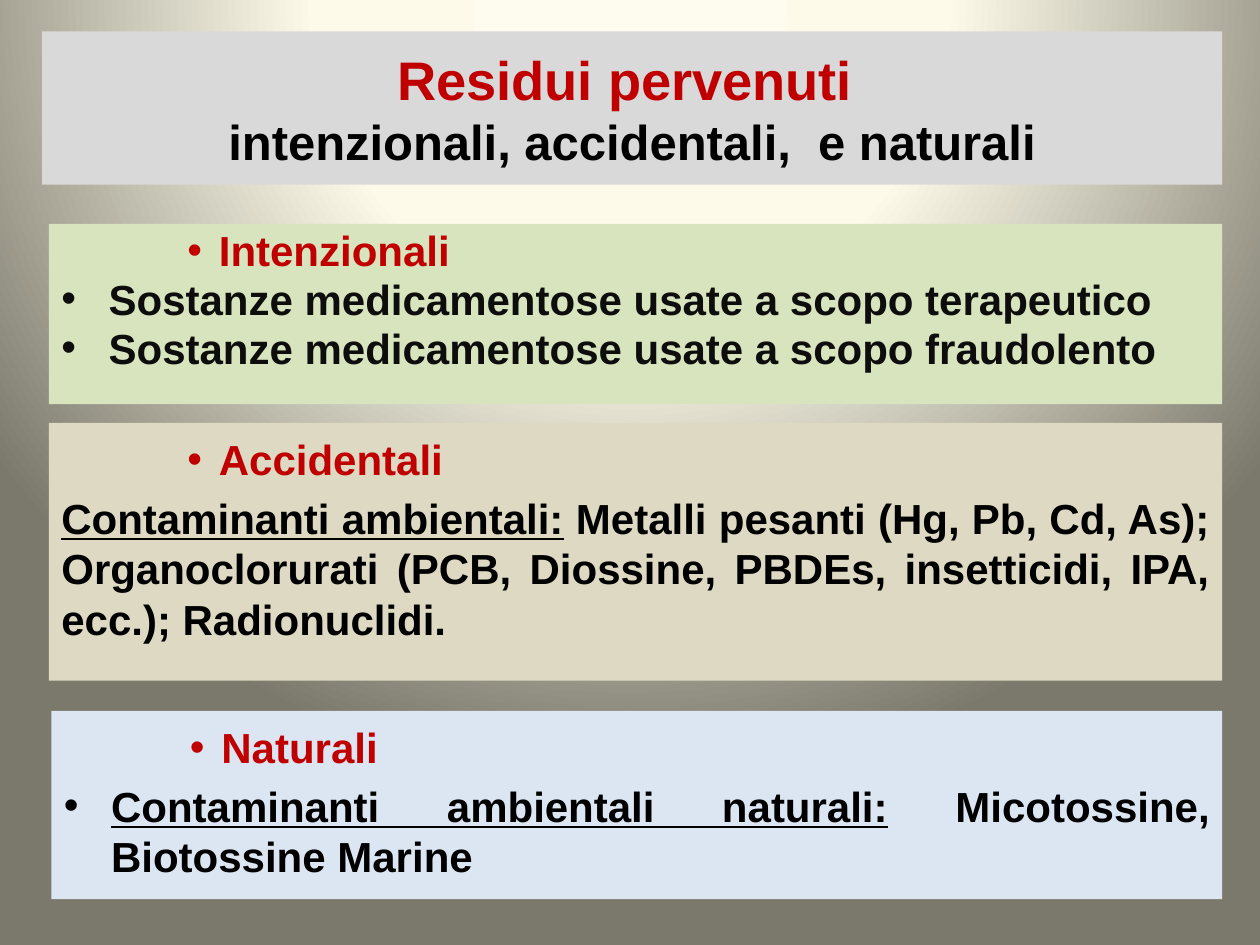
from pptx import Presentation
from pptx.dml.color import RGBColor
from pptx.enum.shapes import MSO_SHAPE as Shape
from pptx.enum.text import MSO_ANCHOR as Anchor, PP_ALIGN as Align
from pptx.oxml import parse_xml
from pptx.oxml.ns import nsdecls
from pptx.util import Pt
from lxml.etree import SubElement

RED, BLACK, DARK = "C00000", "000000", "0D0D0D"
RIGHT = 698.4
STOPS = [(0, "FEFCEE"), (40, "FDFAEA"), (100, "7B796B")]
TITLE = [("Residui pervenuti ", 31, RED),
         ("intenzionali, accidentali,  e naturali", 28, BLACK)]

# Each item: bulleted, underlined lead, remaining text
PANELS = [
    dict(left=28, top=128, high=103, fill="D7E4BD", head="Intenzionali",
         color=DARK, lines=0.8, items=[
             (True, "", "Sostanze medicamentose usate a scopo terapeutico"),
             (True, "", "Sostanze medicamentose usate a scopo fraudolento")]),
    dict(left=28, top=241.7, high=147.3, fill="DDD9C3", head="Accidentali",
         color=BLACK, lines=1, items=[
             (False, "Contaminanti ambientali:",
              " Metalli pesanti (Hg, Pb, Cd, As); Organoclorurati (PCB, "
              "Diossine, PBDEs, insetticidi, IPA, ecc.); Radionuclidi.")]),
    dict(left=29.4, top=406.2, high=107.6, fill="DCE6F2", head="Naturali",
         color=BLACK, lines=1, items=[
             (True, "Contaminanti ambientali naturali:",
              " Micotossine, Biotossine Marine")]),
]


def rgb(code):
    return RGBColor.from_string(code)


def paint(slide):
    """Fill the background with a radial gradient centred above the slide."""
    stops = "".join(f'<a:gs pos="{pos * 1000}"><a:srgbClr val="{code}"/></a:gs>'
                    for pos, code in STOPS)
    back = parse_xml(
        f'<p:bg {nsdecls("p", "a")}><p:bgPr><a:gradFill rotWithShape="1">'
        f'<a:gsLst>{stops}</a:gsLst><a:path path="circle">'
        '<a:fillToRect l="50000" t="-80000" r="50000" b="180000"/></a:path>'
        '</a:gradFill><a:effectLst/></p:bgPr></p:bg>')
    slide.element.cSld.insert(0, back)


def box(slide, left, top, high, fill, anchor=Anchor.TOP, inset=3.6):
    shape = slide.shapes.add_shape(Shape.RECTANGLE, Pt(left), Pt(top),
                                   Pt(RIGHT - left), Pt(high))
    shape.shadow.inherit = False
    shape.fill.solid()
    shape.fill.fore_color.rgb = rgb(fill)
    shape.line.fill.background()
    frame = shape.text_frame
    frame.word_wrap = True
    frame.vertical_anchor = anchor
    frame.margin_top = Pt(inset)
    return frame


def write(para, text, size=24, color=BLACK, under=False):
    run = para.add_run()
    run.text = text
    font = run.font
    font.name, font.size, font.bold = "Arial", Pt(size), True
    font.underline = under
    font.color.rgb = rgb(color)


def bullet(para, left, hang, color):
    props = para._p.get_or_add_pPr()
    props.set("marL", str(Pt(left)))
    props.set("indent", str(-Pt(hang)))
    ns = "{http://schemas.openxmlformats.org/drawingml/2006/main}"
    tint = SubElement(props, ns + "buClr")
    SubElement(tint, ns + "srgbClr", val=color)
    SubElement(props, ns + "buFont", typeface="Arial")
    SubElement(props, ns + "buChar", char="•")


def panel(slide, left, top, high, fill, head, color, lines, items):
    frame = box(slide, left, top, high, fill, inset=6)
    para = frame.paragraphs[0]
    para.alignment, para.line_spacing = Align.JUSTIFY, lines
    bullet(para, 90, 18, RED)
    write(para, head, color=RED)
    for dotted, lead, rest in items:
        para = frame.add_paragraph()
        para.alignment, para.line_spacing = Align.JUSTIFY, lines
        para.space_before = Pt(4.8)
        if dotted:
            bullet(para, 27, 27, color)
        if lead:
            write(para, lead, color=color, under=True)
        write(para, rest, color=color)


def main():
    deck = Presentation()
    deck.slide_width, deck.slide_height = Pt(720), Pt(540)
    slide = deck.slides.add_slide(deck.slide_layouts[6])
    paint(slide)
    para = box(slide, 24, 18, 87.6, "D9D9D9", Anchor.MIDDLE).paragraphs[0]
    para.alignment = Align.CENTER
    for i, (text, size, color) in enumerate(TITLE):
        if i:
            para.add_line_break()
        write(para, text, size, color)
    for spec in PANELS:
        panel(slide, **spec)
    deck.save("out.pptx")


if __name__ == "__main__":
    main()
